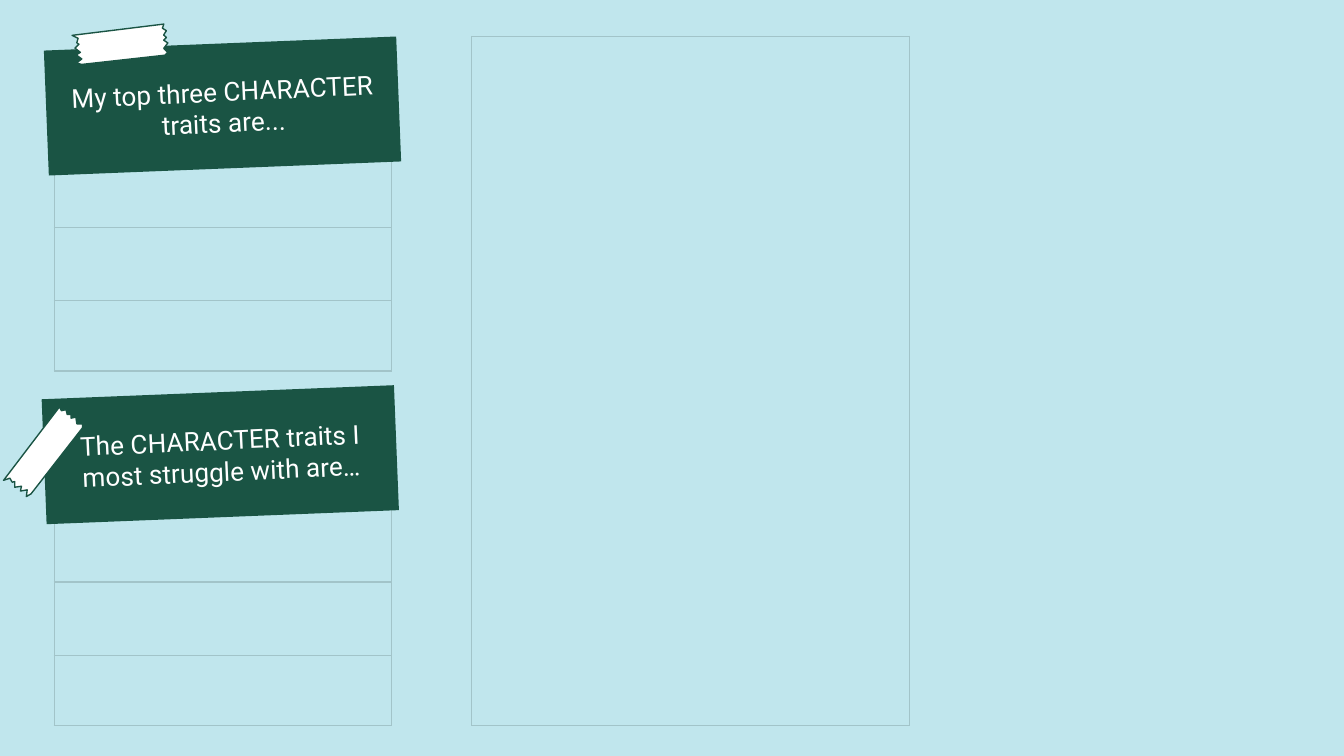
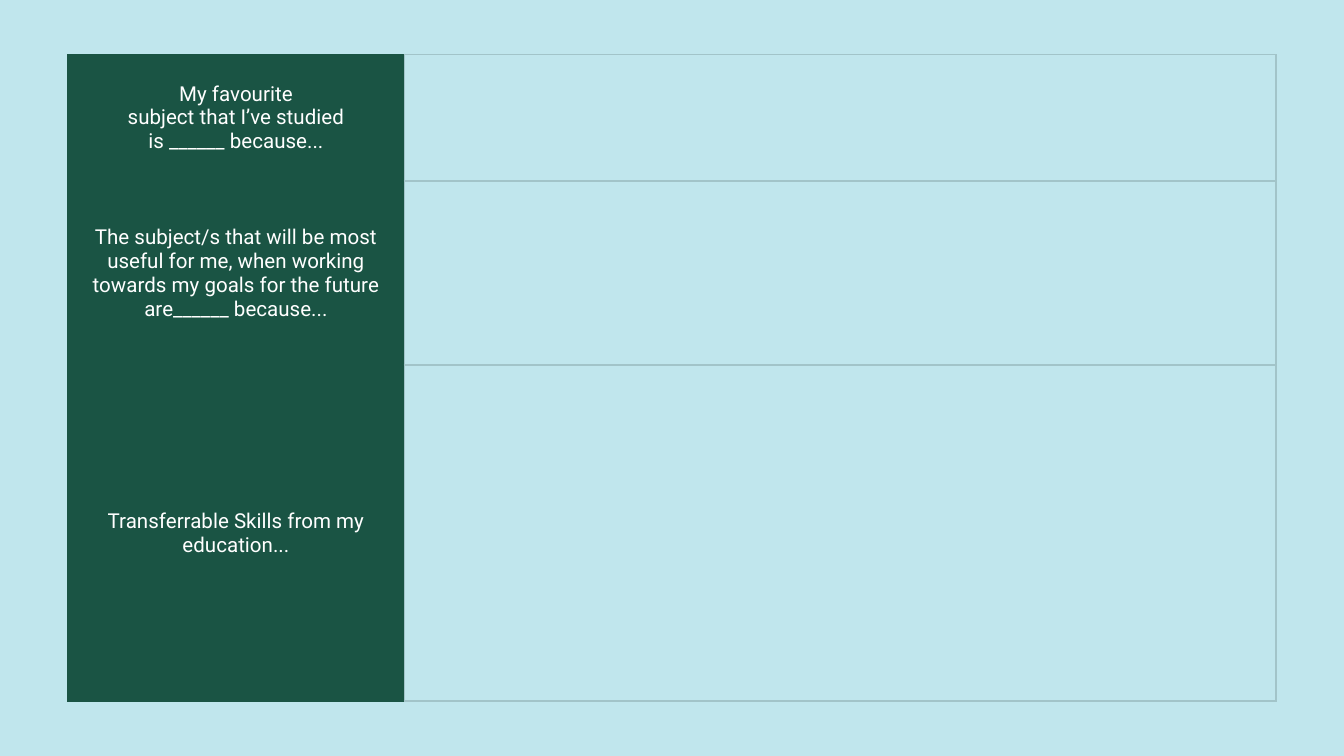
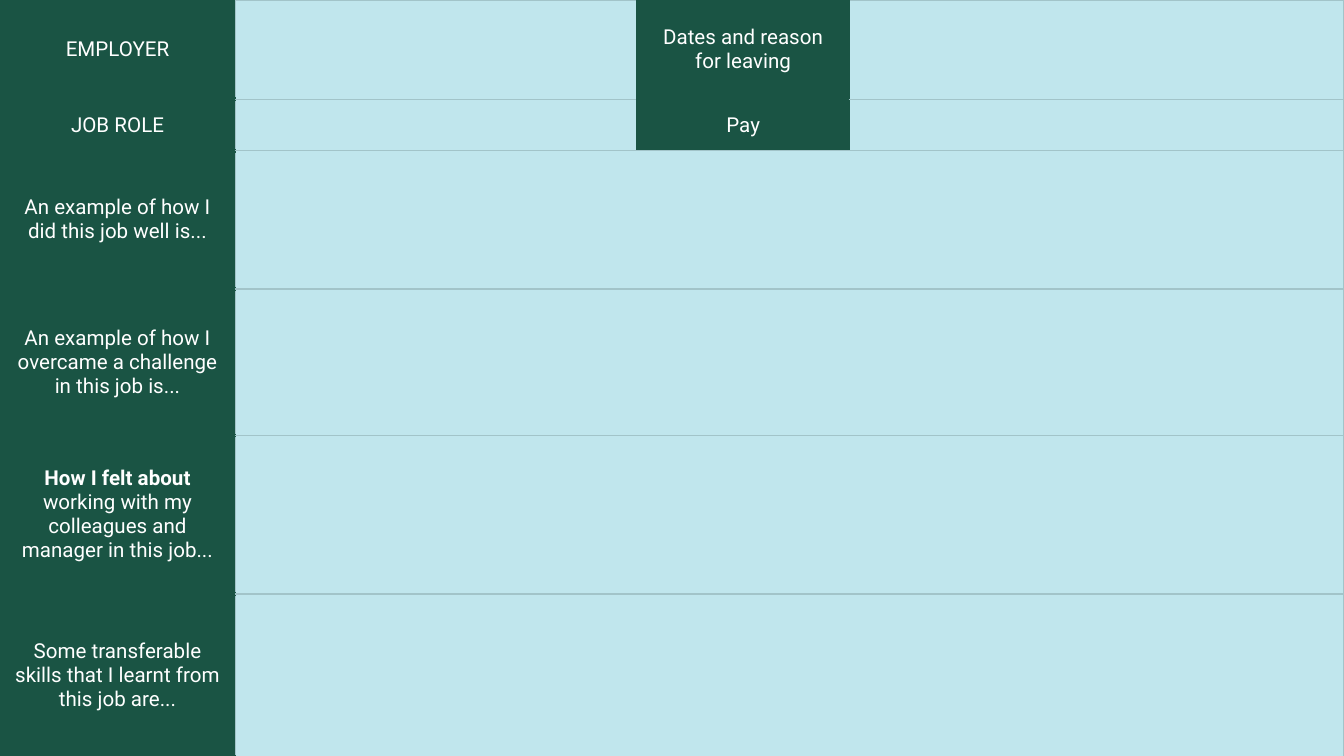
from dataclasses import dataclass

from lxml import etree
from pptx import Presentation
from pptx import util as u
from pptx.dml.color import RGBColor
from pptx.enum import shapes, text
from pptx.oxml import ns

SKY = "C0E6ED"
GREEN = "1A5444"
GRID = "A2C4C9"
WHITE = "FFFFFF"
FONT = "Roboto"
INSET = 7.2
THIN = 0.75

TAPE_OUTLINE = [
    (0, 0), (3, 2), (2, 4.3), (3.1, 5.2), (0.7, 7), (3.3, 9.6), (0.9, 10.7),
    (3.6, 13.2), (0.5, 15), (3.2, 16.1), (48, 16.6), (49.7, 15.3),
    (47.9, 12.9), (50.4, 10.3), (48.4, 8.6), (50, 7.3), (48.7, 5.8),
    (50.4, 3.7), (48.5, 2.1), (49.5, 0),
]


@dataclass
class Label:
    text: str
    bold_start: str = ""


@dataclass
class Grid:
    left: float
    top: float
    widths: list[float]
    heights: list[float]
    rows: list[list[Label | None]]
    label_edge: float = THIN


@dataclass
class Tape:
    left: float
    top: float
    angle: float


@dataclass
class TraitCard:
    list_top: float
    banner_left: float
    banner_top: float
    prompt: str
    tape: Tape


def colour(value: str) -> RGBColor:
    return RGBColor.from_string(value)


def add_page(deck):
    page = deck.slides.add_slide(deck.slide_layouts[6])
    page.background.fill.solid()
    page.background.fill.fore_color.rgb = colour(SKY)
    return page


def format_text(frame, size: float) -> None:
    for para in frame.paragraphs:
        para.alignment = text.PP_ALIGN.CENTER
        for span in para.runs:
            span.font.size = u.Pt(size)
            span.font.name = FONT
            span.font.color.rgb = colour(WHITE)


def set_margins(holder, margin: float) -> None:
    holder.margin_left = holder.margin_right = u.Pt(margin)
    holder.margin_top = holder.margin_bottom = u.Pt(margin)


def paint(shape, fill: str, line: str | None = None) -> None:
    shape.shadow.inherit = False
    shape.fill.solid()
    shape.fill.fore_color.rgb = colour(fill)
    if line:
        shape.line.color.rgb = colour(line)
        shape.line.width = u.Pt(THIN)
    else:
        shape.line.fill.background()


def set_borders(cell, edges: dict[str, tuple[str, float]]) -> None:
    properties = cell._tc.get_or_add_tcPr()
    for position, (side, (value, width)) in enumerate(edges.items()):
        line = etree.Element(ns.qn(f"a:ln{side}"), w=str(u.Pt(width)))
        fill = etree.SubElement(line, ns.qn("a:solidFill"))
        etree.SubElement(fill, ns.qn("a:srgbClr"), val=value)
        properties.insert(position, line)


def write_label(cell, label: Label) -> None:
    frame = cell.text_frame
    frame.text = label.bold_start or label.text
    if label.bold_start:
        para = frame.paragraphs[0]
        para.runs[0].font.bold = True
        para.add_run().text = label.text
    format_text(frame, 11)


def cell_edges(row: list[Label | None], column: int, label_edge: float):
    own = (GREEN, label_edge if column == 0 else THIN) if row[column] else (GRID, THIN)
    edges = dict.fromkeys("LRTB", own)
    if column == 0 and row[column]:
        edges["R"] = (GRID, THIN)
    if column > 1 and row[column - 1]:
        edges["L"] = (GREEN, THIN)
    if column + 1 < len(row) and row[column + 1]:
        edges["R"] = (GREEN, THIN)
    return edges


def add_grid(page, grid: Grid) -> None:
    table = page.shapes.add_table(
        len(grid.heights), len(grid.widths), u.Pt(grid.left), u.Pt(grid.top),
        u.Pt(sum(grid.widths)), u.Pt(sum(grid.heights))).table
    table.first_row = table.horz_banding = False
    for column, width in zip(table.columns, grid.widths):
        column.width = u.Pt(width)
    for table_row, height in zip(table.rows, grid.heights):
        table_row.height = u.Pt(height)
    for index, row in enumerate(grid.rows):
        last = len(grid.widths) - 1
        if len(row) <= last:
            table.cell(index, len(row) - 1).merge(table.cell(index, last))
        for column, label in enumerate(row):
            cell = table.cell(index, column)
            cell.vertical_anchor = text.MSO_ANCHOR.MIDDLE
            set_margins(cell, INSET if label else 0)
            if label:
                cell.fill.solid()
                cell.fill.fore_color.rgb = colour(GREEN)
                write_label(cell, label)
            else:
                cell.fill.background()
            set_borders(cell, cell_edges(row, column, grid.label_edge))


def add_tape(page, tape: Tape) -> None:
    points = [(u.Pt(x), u.Pt(y)) for x, y in TAPE_OUTLINE]
    builder = page.shapes.build_freeform(*points[0], scale=1.0)
    builder.add_line_segments(points[1:], close=True)
    strip = builder.convert_to_shape(u.Pt(tape.left), u.Pt(tape.top))
    strip.rotation = tape.angle
    paint(strip, WHITE, GREEN)


def add_trait_card(page, card: TraitCard) -> None:
    add_grid(page, Grid(29, card.list_top, [180.7], [38.9, 39.4, 37.7], [[None]] * 3))
    banner = page.shapes.add_shape(
        shapes.MSO_SHAPE.RECTANGLE, u.Pt(card.banner_left), u.Pt(card.banner_top),
        u.Pt(188.9), u.Pt(67))
    banner.rotation = 357.7
    paint(banner, GREEN)
    box = page.shapes.add_textbox(
        u.Pt(card.banner_left + 4.6), u.Pt(card.banner_top + 19.4), u.Pt(180), u.Pt(28.8))
    box.rotation = 357.3
    frame = box.text_frame
    frame.word_wrap = True
    frame.vertical_anchor = text.MSO_ANCHOR.MIDDLE
    set_margins(frame, INSET)
    frame.text = card.prompt
    format_text(frame, 14)
    add_tape(page, card.tape)


def build_traits(deck) -> None:
    page = add_page(deck)
    cards = [
        TraitCard(82.8, 24.8, 23.3, "My top three CHARACTER traits are...",
                  Tape(39.5, 15.8, 353)),
        TraitCard(272.9, 23.6, 210.1, "The CHARACTER traits I most struggle with are…",
                  Tape(-1.4, 234, 307.3)),
    ]
    for card in cards:
        add_trait_card(page, card)
    add_grid(page, Grid(252.7, 19.6, [234.4], [369], [[None]]))


def build_education(deck) -> None:
    prompts = [
        "My favourite\nsubject that I’ve studied\nis ______ because...",
        "The subject/s that will be most useful for me, when working towards "
        "my goals for the future are______ because...",
        "Transferrable Skills from my education...",
    ]
    add_grid(add_page(deck), Grid(
        36.3, 29.3, [180.3, 467], [67.7, 98.6, 180],
        [[Label(prompt), None] for prompt in prompts]))


def build_job(deck) -> None:
    facts = [("EMPLOYER", "Dates and reason for leaving"), ("JOB ROLE", "Pay")]
    reflections = [
        Label("An example of how I did this job well is..."),
        Label("An example of how I overcame a challenge in this job is..."),
        Label(" working with my colleagues and manager in this job...", "How I felt about"),
        Label("Some transferable skills that I learnt from this job are..."),
    ]
    rows = [[Label(first), None, Label(second), None] for first, second in facts]
    rows += [[label, None] for label in reflections]
    add_grid(add_page(deck), Grid(
        0, 0, [126, 215.3, 113.7, 265], [53.2, 27.3, 74, 78.5, 85, 87], rows, 2.25))


def main() -> None:
    deck = Presentation()
    deck.slide_width, deck.slide_height = u.Pt(720), u.Pt(405)
    build_traits(deck)
    build_education(deck)
    build_job(deck)
    deck.save("out.pptx")


if __name__ == "__main__":
    main()
